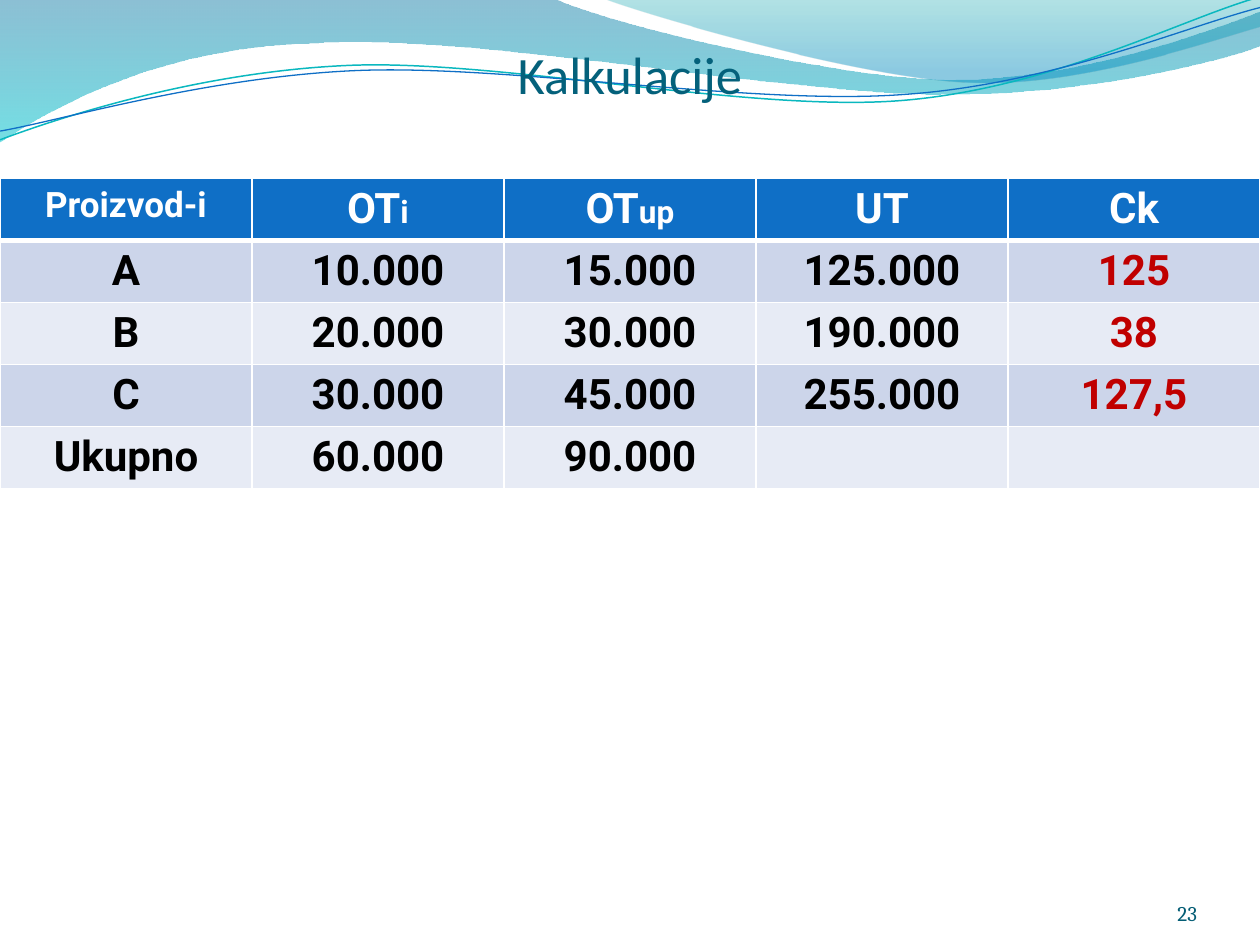
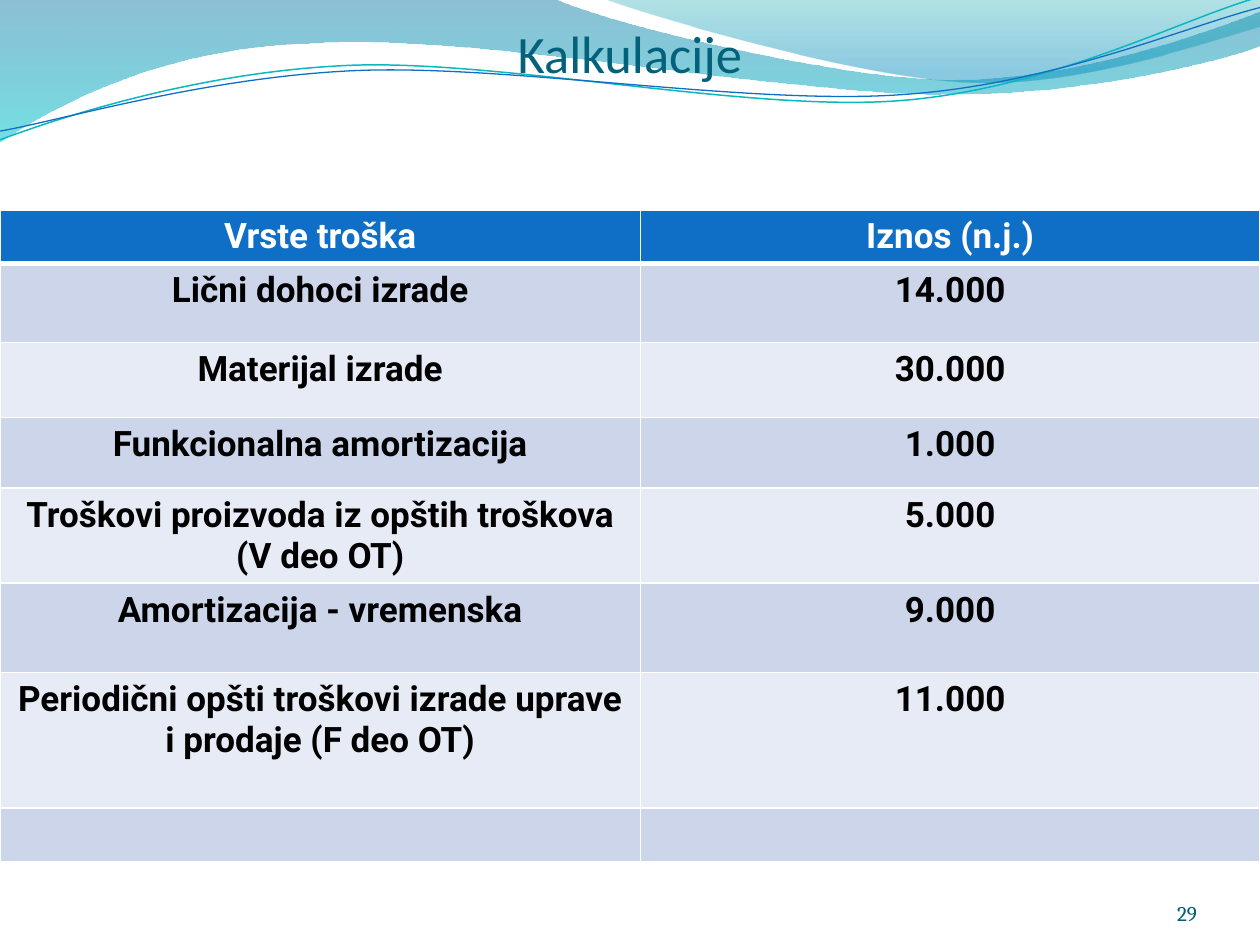
import pptx
import pptx.util
import pptx.dml.color
import pptx.enum.text
import pptx.oxml
import pptx.oxml.ns

Pt = pptx.util.Pt
RGBColor = pptx.dml.color.RGBColor
PP_ALIGN = pptx.enum.text.PP_ALIGN
qn = pptx.oxml.ns.qn
NS = pptx.oxml.ns.nsdecls("a")

# Colours
WHITE = RGBColor(0xFF, 0xFF, 0xFF)
BLACK = RGBColor(0x00, 0x00, 0x00)
RED = RGBColor(0xC0, 0x00, 0x00)
BLUE = RGBColor(0x0F, 0x6F, 0xC6)
TURQUOISE = RGBColor(0x0A, 0xB8, 0xBF)
TITLE = RGBColor(0x04, 0x61, 0x7B)
NUMBER = RGBColor(0x04, 0x5D, 0x75)
ROWS = [RGBColor(0xCC, 0xD5, 0xEA), RGBColor(0xE7, 0xEB, 0xF5)]

# Content: a cell is a string, or a list of (text, size) runs
SLIDES = [
    {"title": "Kalkulacije", "title_height": 60, "number": "23",
     "top": 102, "size": 24, "last_column": RED,
     "widths": [144] * 5, "heights": [29.5] * 5,
     "rows": [
         [[("Proizvod-i", 20)], [("OT", 24), ("i", 18)],
          [("OT", 24), ("up", 18)], "UT", "Ck"],
         ["A", "10.000", "15.000", "125.000", "125"],
         ["B", "20.000", "30.000", "190.000", "38"],
         ["C", "30.000", "45.000", "255.000", "127,5"],
         ["Ukupno", "60.000", "90.000", "", ""]]},
    {"title": "Kalkulacije", "title_height": 48, "number": "29",
     "top": 120, "size": 20, "last_column": BLACK,
     "widths": [366, 354],
     "heights": [30.5, 45, 42.75, 40.5, 54, 51, 77.5, 30.5],
     "rows": [
         ["Vrste troška", "Iznos (n.j.)"],
         ["Lični dohoci izrade", "14.000"],
         ["Materijal izrade", "30.000"],
         ["Funkcionalna amortizacija", "1.000"],
         ["Troškovi proizvoda iz opštih troškova (V deo OT)", "5.000"],
         ["Amortizacija - vremenska", "9.000"],
         ["Periodični opšti troškovi izrade uprave i prodaje (F deo OT)",
          "11.000"],
         ["", ""]]},
]

# Waves: after the start point, one point is a line and three are a Bézier curve
BANDS = [
    ([[(0, 0)], [(316.8, -0.7)],
      [(342.7, 12.2), (478, 45.4), (545.8, 45.4)],
      [(614.2, 45.4), (689.8, 18.7), (720, 6.5)], [(720.7, 25.9)],
      [(707.8, 31.7), (626.4, 54.7), (537.1, 54)],
      [(447.8, 54), (275, 20.2), (185, 24.5)],
      [(92.9, 25.9), (33.1, 59.8), (-0.7, 81.4)], [(0, 0)]],
     [(0, RGBColor(0x00, 0x74, 0xA1), 45), (1, RGBColor(0x00, 0xC6, 0xCF), 55)]),
    ([[(344.9, -0.7)],
      [(366.5, 7.9), (491, 44.6), (553.7, 46.8)],
      [(616.3, 49.7), (691.9, 23), (720, 15.1)], [(720, 0)], [(344.9, -0.7)]],
     [(0, RGBColor(0x00, 0xA1, 0xA9), 30), (0.8, RGBColor(0x00, 0x8B, 0xBF), 45)]),
]
LINES = [
    ([[(0, 79.9)],
      [(34.6, 67), (113.8, 41), (199.4, 37.4)],
      [(284.4, 33.8), (427, 64.1), (513.4, 57.6)],
      [(599.8, 51.1), (675.4, 10.8), (718.6, -1.4)]], TURQUOISE, 0.85),
    ([[(0, 74.9)],
      [(33.8, 69.1), (118.1, 43.9), (203.8, 40.3)],
      [(290.2, 36.7), (429.8, 60.5), (516.2, 54)],
      [(601.9, 48.2), (677.5, 15.1), (720, 4.3)]], BLUE, 0.75),
]


def set_all(obj, values):
    for name, value in values.items():
        setattr(obj, name, value)


def add_text(p, text, font, size, color, bold=False):
    r = p.add_run()
    r.text = text
    set_all(r.font, {"name": font, "size": Pt(size), "bold": bold})
    r.font.color.rgb = color


def add_outline(s, outline, close):
    points = [(Pt(x), Pt(y)) for segment in outline for x, y in segment]
    builder = s.shapes.build_freeform(*points[0])
    builder.add_line_segments(points[1:], close=close)
    sp = builder.convert_to_shape()
    sp.shadow.inherit = False
    # Join each three control points into one curve
    steps = iter(list(sp.element.iter(qn("a:lnTo"))))
    for segment in outline[1:]:
        group = [next(steps) for _ in segment]
        if len(group) == 3:
            curve = pptx.oxml.parse_xml(f"<a:cubicBezTo {NS}/>")
            group[0].addprevious(curve)
            for step in group:
                curve.append(step[0])
                step.getparent().remove(step)
    return sp


def add_waves(s):
    for outline, stops in BANDS:
        sp = add_outline(s, outline, True)
        sp.line.fill.background()
        sp.fill.gradient()
        sp.fill.gradient_angle = 270
        for stop, (position, color, _) in zip(sp.fill.gradient_stops, stops):
            stop.position = position
            stop.color.rgb = color
        colors = list(sp.element.spPr.iter(qn("a:srgbClr")))
        for clr, (_, _, opacity) in zip(colors, stops):
            clr.append(pptx.oxml.parse_xml(f'<a:alpha {NS} val="{opacity * 1000}"/>'))
    for outline, color, width in LINES:
        sp = add_outline(s, outline, False)
        sp.fill.background()
        sp.line.color.rgb = color
        sp.line.width = Pt(width)


def format_frame(tf, top, align):
    set_all(tf, {"margin_left": 0, "margin_right": 0, "margin_top": Pt(top),
                 "margin_bottom": 0, "word_wrap": True,
                 "auto_size": pptx.enum.text.MSO_AUTO_SIZE.NONE,
                 "vertical_anchor": pptx.enum.text.MSO_ANCHOR.BOTTOM})
    p = tf.paragraphs[0]
    p.alignment = align
    return p


def add_title(s, text, height):
    sp = s.shapes.title
    set_all(sp, {"left": 0, "top": 0, "width": Pt(720), "height": Pt(height)})
    s.shapes.element.append(sp.element)  # bring in front of the waves
    add_text(format_frame(sp.text_frame, 3.6, PP_ALIGN.CENTER),
             text, "Calibri", 30, TITLE)


def add_number(s, text):
    sp = s.shapes.add_textbox(Pt(624), Pt(500.4), Pt(60), Pt(28.8))
    add_text(format_frame(sp.text_frame, 0, PP_ALIGN.RIGHT),
             text, "Cambria", 12, NUMBER)


def add_borders(cell, top, bottom):
    tc_pr = cell._tc.get_or_add_tcPr()
    for side, width in (("L", 1), ("R", 1), ("T", top), ("B", bottom)):
        tc_pr.append(pptx.oxml.parse_xml(
            f'<a:ln{side} {NS} w="{Pt(width)}"><a:solidFill>'
            f'<a:srgbClr val="{WHITE}"/></a:solidFill></a:ln{side}>'))


def add_cost_table(s, data):
    rows, widths, heights = data["rows"], data["widths"], data["heights"]
    table = s.shapes.add_table(len(rows), len(widths), 0, Pt(data["top"]),
                               Pt(sum(widths)), Pt(sum(heights))).table
    for column, width in zip(table.columns, widths):
        column.width = Pt(width)
    for i, (row, height) in enumerate(zip(rows, heights)):
        table.rows[i].height = Pt(height)
        for j, content in enumerate(row):
            cell = table.cell(i, j)
            add_borders(cell, 3 if i == 1 else 1, 3 if i == 0 else 1)
            cell.fill.solid()
            cell.fill.fore_color.rgb = ROWS[(i - 1) % 2] if i else BLUE
            color = WHITE if i == 0 else BLACK
            if i and j == len(row) - 1:
                color = data["last_column"]
            if isinstance(content, str):
                content = [(content, data["size"])] if content else []
            p = cell.text_frame.paragraphs[0]
            p.alignment = PP_ALIGN.CENTER
            for text, size in content:
                add_text(p, text, "Roboto", size, color, True)


def main():
    prs = pptx.Presentation()
    prs.slide_width, prs.slide_height = Pt(720), Pt(540)
    for data in SLIDES:
        s = prs.slides.add_slide(prs.slide_layouts[5])
        add_waves(s)
        add_title(s, data["title"], data["title_height"])
        add_cost_table(s, data)
        add_number(s, data["number"])
    prs.save("out.pptx")


if __name__ == "__main__":
    main()
